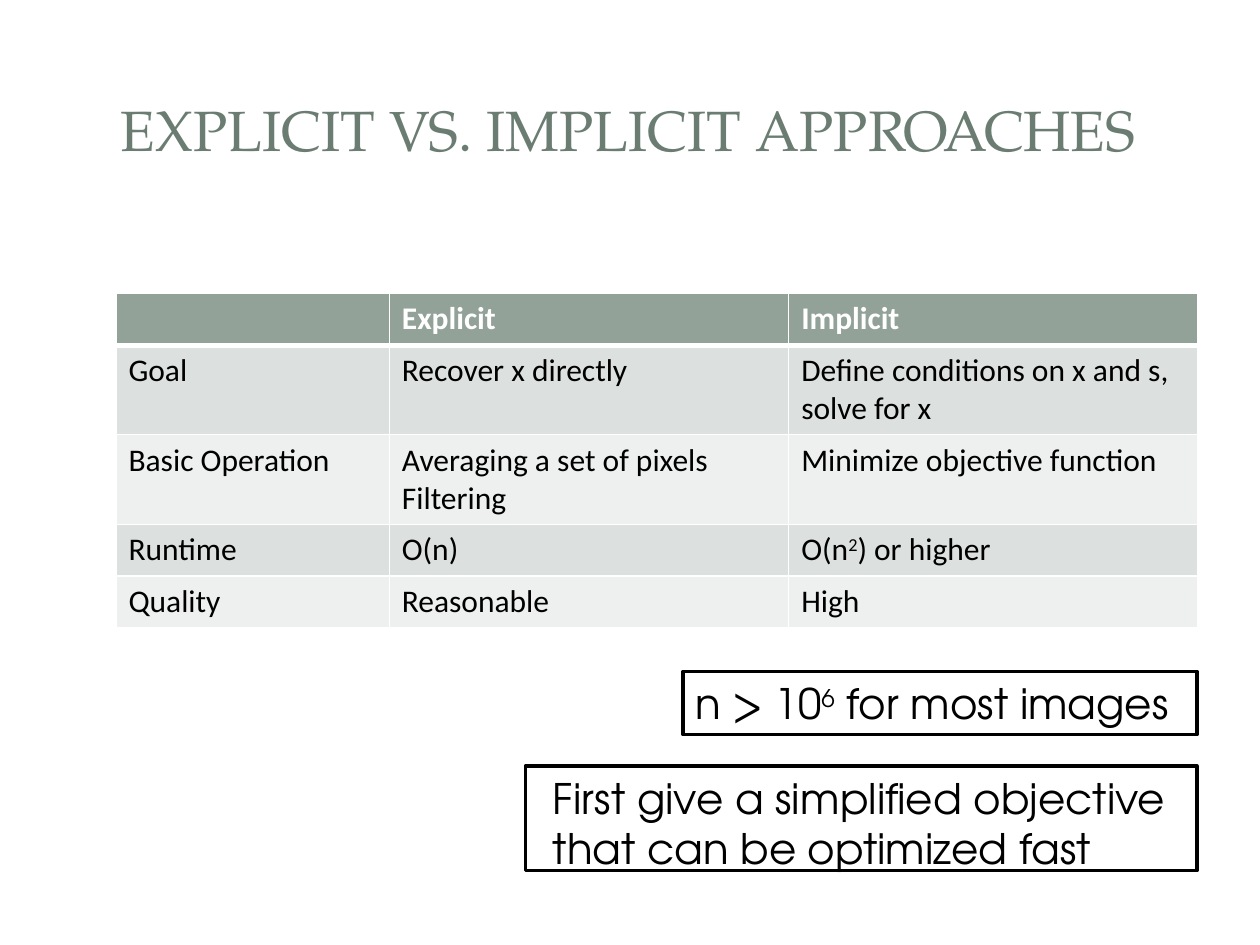
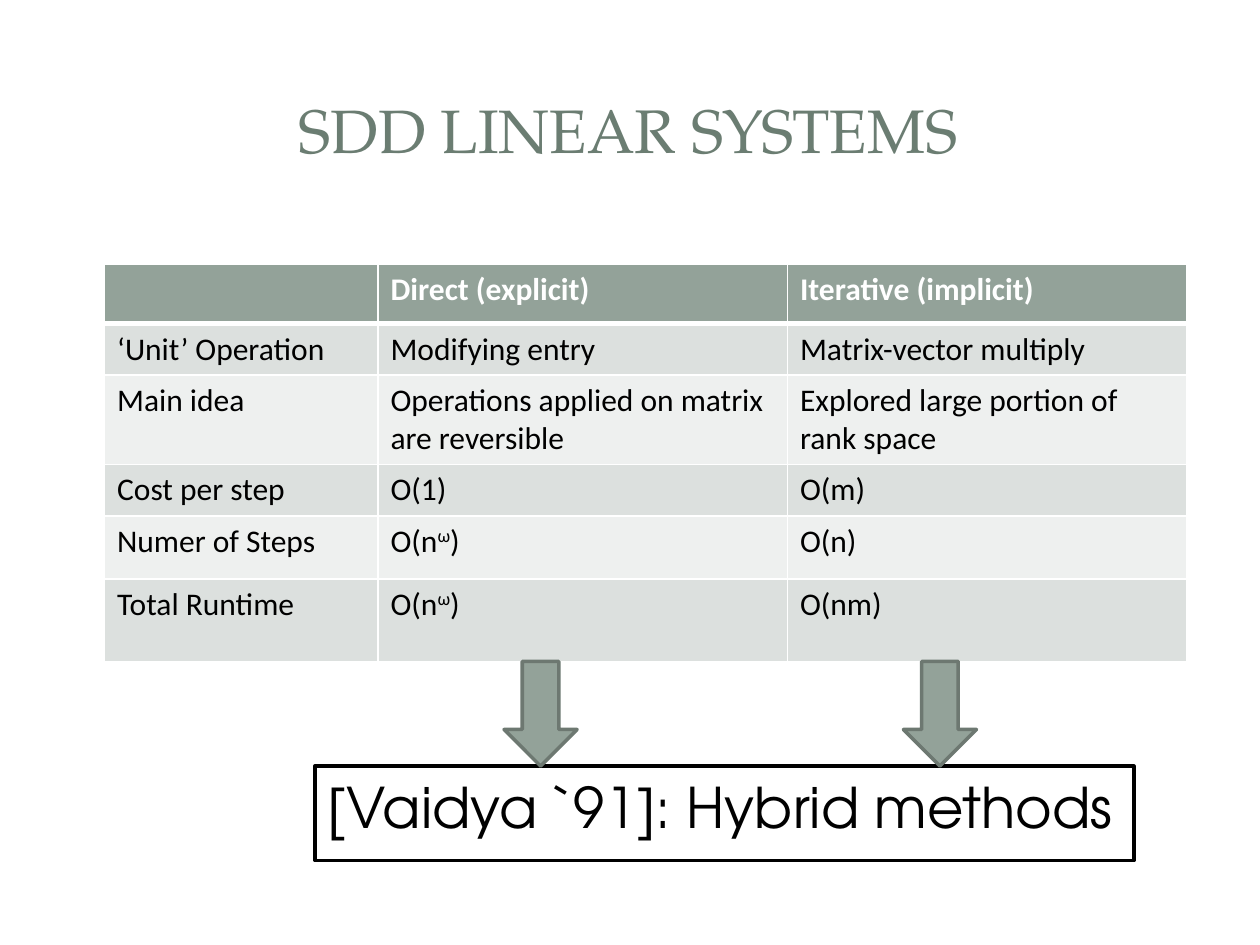
from lxml.etree import SubElement
from pptx import Presentation
from pptx.dml.color import RGBColor
from pptx.enum.shapes import MSO_SHAPE as Shape
from pptx.enum.text import MSO_ANCHOR as Anchor, PP_ALIGN as Align
from pptx.oxml.ns import qn
from pptx.util import Inches, Pt

WHITE = RGBColor(0xFF, 0xFF, 0xFF)
BLACK = RGBColor(0, 0, 0)
TITLE_GREEN = RGBColor(0x6B, 0x7D, 0x72)
HEADER_GREEN = RGBColor(0x93, 0xA2, 0x99)
ARROW_EDGE = RGBColor(0x6D, 0x78, 0x71)
BANDS = RGBColor(0xDC, 0xE0, 0xDE), RGBColor(0xEE, 0xF0, 0xEF)

TITLE_FONT, TABLE_FONT, CALLOUT_FONT = "TeX Gyre Pagella", "Calibri", "TeX Gyre Adventor"
TITLE_BOX = 0.47, 0.45, 9.03, 1.14

# Text between two ^ marks is superscript; a line break starts a new paragraph.
SLIDES = [
    {
        "title": ("EXPLICIT VS. IMPLICIT APPROACHES", 32.4),
        "table_at": (0.92, 2.33),
        "columns": [2.17, 3.17, 3.25],
        "row_heights": [0.41] * 5,
        "rows": [
            ("", "Explicit", "Implicit"),
            ("Goal", "Recover x directly", "Define conditions on x and s, solve for x"),
            ("Basic Operation", "Averaging a set of pixels\nFiltering",
             "Minimize objective function"),
            ("Runtime", "O(n)", "O(n^2^) or higher"),
            ("Quality", "Reasonable", "High"),
        ],
        "callouts": [
            ("n > 10^6^ for most images", 24, 0, (5.42, 5.33, 4.08, 0.5)),
            ("First give a simplified objective that can be optimized fast", 24, 0.12,
             (4.17, 6.08, 5.33, 0.83)),
        ],
        "arrows": [],
    },
    {
        "title": ("SDD LINEAR SYSTEMS", 35),
        "table_at": (0.83, 2.1),
        "columns": [2.17, 3.25, 3.17],
        "row_heights": [0.47, 0.38, 0.66, 0.41, 0.5, 0.66],
        "rows": [
            ("", "Direct (explicit)", "Iterative (implicit)"),
            ("‘Unit’ Operation", "Modifying entry", "Matrix-vector multiply"),
            ("Main idea", "Operations applied on matrix are reversible",
             "Explored large portion of rank space"),
            ("Cost per step", "O(1)", "O(m)"),
            ("Numer of Steps", "O(n^ω^)", "O(n)"),
            ("Total Runtime", "O(n^ω^)", "O(nm)"),
        ],
        "callouts": [("[Vaidya `91]: Hybrid methods", 32, 0, (2.5, 6.08, 6.5, 0.75))],
        "arrows": [(4, 5.25, 0.58, 0.83), (7.17, 5.25, 0.58, 0.83)],
    },
]


def inches(lengths):
    return [Inches(length) for length in lengths]


def write(paragraph, text, font_name, size, color, bold=False):
    """Add runs, raising each part that stands between ^ marks."""
    for index, part in enumerate(text.split("^")):
        run = paragraph.add_run()
        run.text = part
        font = run.font
        font.name, font.size, font.bold = font_name, Pt(size), bold
        font.color.rgb = color
        if index % 2:
            run._r.get_or_add_rPr().set("baseline", "30000")


def add_title(slide, text, size):
    title = slide.shapes.title
    title.left, title.top, title.width, title.height = inches(TITLE_BOX)
    frame = title.text_frame
    frame.vertical_anchor = Anchor.MIDDLE
    frame.paragraphs[0].alignment = Align.CENTER
    write(frame.paragraphs[0], text, TITLE_FONT, size, TITLE_GREEN)


def add_borders(cell, **widths):
    """Draw white borders; widths are points by side: L, R, T, B."""
    properties = cell._tc.get_or_add_tcPr()
    for side, width in widths.items():
        line = SubElement(properties, qn(f"a:ln{side}"), w=str(Pt(width)))
        fill = SubElement(line, qn("a:solidFill"))
        SubElement(fill, qn("a:srgbClr"), val=str(WHITE))


def fill_cell(cell, text, row):
    header = row == 0
    add_borders(cell, L=1, R=1, T=3 if row == 1 else 1, B=3 if header else 1)
    cell.fill.solid()
    cell.fill.fore_color.rgb = HEADER_GREEN if header else BANDS[(row - 1) % 2]
    frame = cell.text_frame
    for index, line in enumerate(text.split("\n") if text else []):
        paragraph = frame.add_paragraph() if index else frame.paragraphs[0]
        write(paragraph, line, TABLE_FONT, 18, WHITE if header else BLACK, header)


def add_comparison(slide, position, columns, row_heights, rows):
    size = sum(columns), sum(row_heights)
    table = slide.shapes.add_table(
        len(rows), len(columns), *inches(position + size)).table
    for column, width in zip(table.columns, columns):
        column.width = Inches(width)
    for row, height in zip(table.rows, row_heights):
        row.height = Inches(height)
    for r, row in enumerate(rows):
        for c, text in enumerate(row):
            fill_cell(table.cell(r, c), text, r)


def add_outlined(slide, kind, box, fill, edge):
    shape = slide.shapes.add_shape(kind, *inches(box))
    shape.shadow.inherit = False
    shape.fill.solid()
    shape.fill.fore_color.rgb = fill
    shape.line.color.rgb = edge
    shape.line.width = Pt(2)
    return shape


def add_callout(slide, text, size, indent, box):
    frame = add_outlined(slide, Shape.RECTANGLE, box, WHITE, BLACK).text_frame
    frame.word_wrap = True
    frame.vertical_anchor = Anchor.TOP
    paragraph = frame.paragraphs[0]
    paragraph.alignment = Align.LEFT
    paragraph.space_before = Pt(0.2 * size)
    paragraph._p.get_or_add_pPr().set("marL", str(Inches(indent)))
    write(paragraph, text, CALLOUT_FONT, size, BLACK)


def main():
    deck = Presentation()
    deck.slide_width, deck.slide_height = Inches(10), Inches(7.5)
    title_only = deck.slide_layouts[5]
    for content in SLIDES:
        slide = deck.slides.add_slide(title_only)
        add_title(slide, *content["title"])
        add_comparison(slide, content["table_at"], content["columns"],
                       content["row_heights"], content["rows"])
        for callout in content["callouts"]:
            add_callout(slide, *callout)
        for box in content["arrows"]:
            add_outlined(slide, Shape.DOWN_ARROW, box, HEADER_GREEN, ARROW_EDGE)
    deck.save("out.pptx")


if __name__ == "__main__":
    main()
